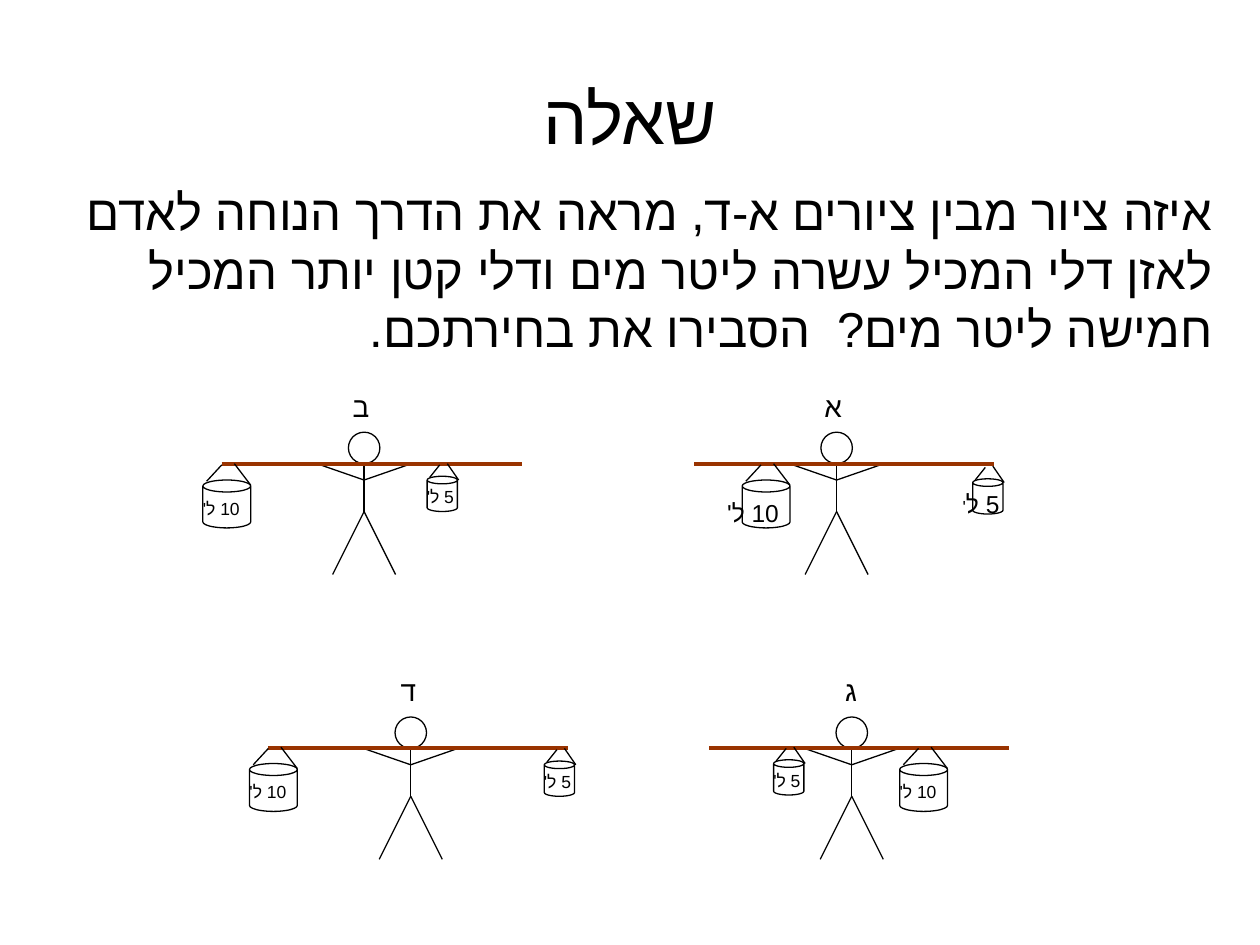
from collections import namedtuple

from lxml import etree
from pptx import Presentation
from pptx.dml.color import RGBColor
from pptx.enum import shapes, text
from pptx.oxml import ns
from pptx.util import Inches, Pt

BLACK = RGBColor(0x00, 0x00, 0x00)
WHITE = RGBColor(0xFF, 0xFF, 0xFF)
WOOD = RGBColor(0x99, 0x33, 0x00)
FONT = "Arial"

QUESTION = ("איזה ציור מבין ציורים א-ד, מראה את הדרך הנוחה לאדם לאזן דלי המכיל "
            "עשרה ליטר מים ודלי קטן יותר המכיל חמישה ליטר מים?  הסבירו את בחירתכם.")

# Straps run from the bucket to the beam, as offsets from the bucket's top left
Bucket = namedtuple("Bucket", "width height straps label_dx label_dy")
LARGE = Bucket(0.38, 0.38, [(0.03, 0.01, 0.15, -0.12), (0.25, -0.13, 0.38, 0.04)], -0.23, 0.09)
SMALL = Bucket(0.24, 0.28, [(0.02, 0.01, 0.10, -0.09), (0.16, -0.10, 0.25, 0.03)], -0.31, 0.03)

TEN, FIVE = "10 ל'", "5 ל'"

# Letter, centre x, beam y, then (bucket, left, top, label runs) for each bucket
CARRIERS = [
    ("א", 6.64, 3.68, [(LARGE, 5.89, 3.81, [(TEN, 14)]),
                       (SMALL, 7.72, 3.80, [("5 ל", 14), ("'", 10)])]),
    ("ב", 2.89, 3.68, [(LARGE, 1.61, 3.81, [(TEN, 10)]),
                       (SMALL, 3.39, 3.78, [(FIVE, 10)])]),
    ("ג", 6.76, 5.94, [(LARGE, 7.14, 6.06, [(TEN, 10)]),
                       (SMALL, 6.14, 6.03, [(FIVE, 10)])]),
    ("ד", 3.26, 5.94, [(LARGE, 1.98, 6.06, [(TEN, 10)]),
                       (SMALL, 4.32, 6.04, [(FIVE, 10)])]),
]


def write_hebrew(frame, runs, align, anchor):
    """Fill a frame with one right-to-left paragraph of (text, size) runs."""
    frame.word_wrap = True
    frame.vertical_anchor = anchor
    para = frame.paragraphs[0]
    para.alignment = align
    para._p.get_or_add_pPr().set("rtl", "1")
    for words, size in runs:
        span = para.add_run()
        span.text = words
        span.font.size = Pt(size)
        span.font.name = FONT
        span.font.color.rgb = BLACK
        etree.SubElement(span._r.get_or_add_rPr(), ns.qn("a:cs")).set("typeface", FONT)


def add_text(parent, left, top, width, height, runs):
    box = parent.add_textbox(Inches(left), Inches(top), Inches(width), Inches(height))
    write_hebrew(box.text_frame, runs, text.PP_ALIGN.RIGHT, text.MSO_ANCHOR.TOP)


def add_line(parent, x1, y1, x2, y2, color=BLACK, weight=0.75):
    line = parent.add_connector(shapes.MSO_CONNECTOR.STRAIGHT,
                                Inches(x1), Inches(y1), Inches(x2), Inches(y2))
    line.line.color.rgb = color
    line.line.width = Pt(weight)
    etree.SubElement(line._element.spPr, ns.qn("a:effectLst"))


def add_outline(parent, kind, left, top, width, height):
    shape = parent.add_shape(kind, Inches(left), Inches(top), Inches(width), Inches(height))
    shape.shadow.inherit = False
    shape.fill.solid()
    shape.fill.fore_color.rgb = WHITE
    shape.line.color.rgb = BLACK
    shape.line.width = Pt(0.75)


def add_person(parent, x, beam):
    add_outline(parent, shapes.MSO_SHAPE.OVAL, x - 0.125, beam - 0.25, 0.25, 0.25)
    hip, shoulder = beam + 0.38, beam + 0.13
    add_line(parent, x, beam, x, hip)
    for side in (-1, 1):
        add_line(parent, x, hip, x + side * 0.25, hip + 0.5)
        add_line(parent, x, shoulder, x + side * 0.375, beam)


def add_bucket(parent, bucket, left, top, runs):
    add_outline(parent, shapes.MSO_SHAPE.CAN, left, top, bucket.width, bucket.height)
    for x1, y1, x2, y2 in bucket.straps:
        add_line(parent, left + x1, top + y1, left + x2, top + y2)
    add_text(parent, left + bucket.label_dx, top + bucket.label_dy, 0.62, 0.38, runs)


def add_carrier(page, letter, x, beam, buckets):
    """One person with a beam, two buckets and an answer letter, as a group."""
    group = page.shapes.add_group_shape().shapes
    add_person(group, x, beam)
    add_line(group, x - 1.13, beam, x + 1.25, beam, WOOD, 2.25)
    for bucket in buckets:
        add_bucket(group, *bucket)
    add_text(group, x - 0.24, beam - 0.64, 0.38, 0.38, [(letter, 16)])


def add_title(page, words):
    title = page.shapes.title
    title.left, title.top = Inches(0.5), Inches(0.3)
    title.width, title.height = Inches(9), Inches(1.25)
    write_hebrew(title.text_frame, [(words, 40)], text.PP_ALIGN.CENTER, text.MSO_ANCHOR.MIDDLE)


def main():
    deck = Presentation()
    deck.slide_width, deck.slide_height = Inches(10), Inches(7.5)
    page = deck.slides.add_slide(deck.slide_layouts.get_by_name("Title Only"))

    # Heading and question
    add_title(page, "שאלה")
    add_text(page.shapes, 0.35, 1.39, 9.37, 1.97, [(QUESTION, 28)])

    # The four drawings to choose from
    for carrier in CARRIERS:
        add_carrier(page, *carrier)

    deck.save("out.pptx")


if __name__ == "__main__":
    main()
